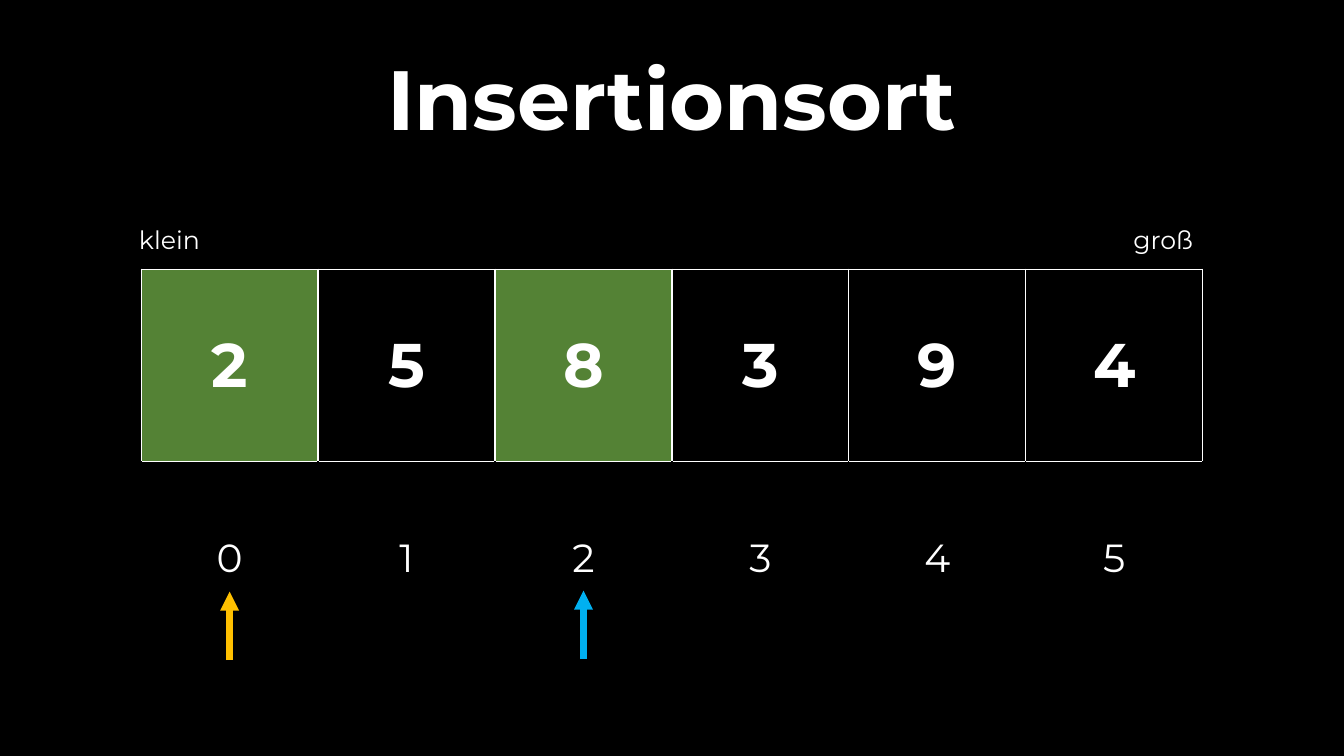
from lxml import etree
from pptx import Presentation
from pptx.dml.color import RGBColor
from pptx.enum.shapes import MSO_CONNECTOR
from pptx.enum.text import MSO_ANCHOR, MSO_AUTO_SIZE, PP_ALIGN
from pptx.oxml.ns import qn
from pptx.util import Inches, Pt

LEFT, CENTER, RIGHT = PP_ALIGN.LEFT, PP_ALIGN.CENTER, PP_ALIGN.RIGHT
TOP, MIDDLE = MSO_ANCHOR.TOP, MSO_ANCHOR.MIDDLE
STRAIGHT = MSO_CONNECTOR.STRAIGHT
FIT_SHAPE = MSO_AUTO_SIZE.SHAPE_TO_FIT_TEXT

BLACK = RGBColor(0x00, 0x00, 0x00)
WHITE = RGBColor(0xFF, 0xFF, 0xFF)
GREEN = RGBColor(0x54, 0x82, 0x35)
BLUE = RGBColor(0x00, 0xB0, 0xF0)
ORANGE = RGBColor(0xFF, 0xC0, 0x00)

VALUES = [2, 5, 8, 3, 9, 4]
SORTED_INDICES = {0, 2}
TABLE_LEFT, TABLE_TOP = 1.4, 2.67
CELL_WIDTH, CELL_HEIGHT = 1.755, 1.91
ARROW_LENGTH = 0.68


def write_text(paragraph, text, size, bold=False, align=LEFT):
    paragraph.alignment = align
    run = paragraph.add_run()
    run.text = text
    run.font.name = "Montserrat"
    run.font.size = Pt(size)
    run.font.bold = bold
    run.font.color.rgb = WHITE


def set_borders(cell, colors):
    properties = cell._tc.get_or_add_tcPr()
    for position, (side, color) in enumerate(zip("LRTB", colors)):
        line = etree.Element(qn(f"a:ln{side}"), w=str(Pt(1)))
        fill = etree.SubElement(line, qn("a:solidFill"))
        etree.SubElement(fill, qn("a:srgbClr"), val=str(color))
        properties.insert(position, line)


class SortSlide:
    def __init__(self, presentation):
        self.slide = presentation.slides.add_slide(presentation.slide_layouts[6])
        background = self.slide.background.fill
        background.solid()
        background.fore_color.rgb = BLACK

    def text(self, text, left, top, width, height, anchor=TOP, **text_format):
        shape = self.slide.shapes.add_textbox(
            Inches(left), Inches(top), Inches(width), Inches(height))
        frame = shape.text_frame
        frame.word_wrap = True
        frame.vertical_anchor = anchor
        write_text(frame.paragraphs[0], text, **text_format)
        return frame

    def title(self, text):
        frame = self.text(text, 0.15, 0.31, 13.03, 1.42, anchor=MIDDLE,
                          size=60, bold=True, align=CENTER)
        paragraph = frame.paragraphs[0]
        paragraph.line_spacing = 0.9
        paragraph.space_before = Pt(10)

    def label(self, text, left, align):
        frame = self.text(text, left, 2.18, 1.51, 0.4, size=18, align=align)
        frame.auto_size = FIT_SHAPE

    def cell(self, cell, text, fill_color, borders, **text_format):
        cell.vertical_anchor = MIDDLE
        if fill_color is None:
            cell.fill.background()
        else:
            cell.fill.solid()
            cell.fill.fore_color.rgb = fill_color
        set_borders(cell, borders)
        write_text(cell.text_frame.paragraphs[0], text, align=CENTER, **text_format)

    def array(self, values, sorted_indices):
        table = self.slide.shapes.add_table(
            2, len(values), Inches(TABLE_LEFT), Inches(TABLE_TOP),
            Inches(CELL_WIDTH * len(values)), Inches(CELL_HEIGHT * 2)).table
        table.first_row = False
        table.horz_banding = False
        for row in table.rows:
            row.height = Inches(CELL_HEIGHT)
        for index, value in enumerate(values):
            table.columns[index].width = Inches(CELL_WIDTH)
            fill_color = GREEN if index in sorted_indices else None
            self.cell(table.cell(0, index), str(value), fill_color,
                      [WHITE] * 4, size=44, bold=True)
            self.cell(table.cell(1, index), str(index), None,
                      [BLACK, BLACK, WHITE, BLACK], size=28)

    def pointer(self, index, tip, color):
        x = Inches(TABLE_LEFT + CELL_WIDTH * (index + 0.5))
        arrow = self.slide.shapes.add_connector(
            STRAIGHT, x, Inches(tip + ARROW_LENGTH), x, Inches(tip))
        arrow.line.color.rgb = color
        arrow.line.width = Pt(4.5)
        etree.SubElement(arrow.line._get_or_add_ln(), qn("a:tailEnd"), type="triangle")
        etree.SubElement(arrow._element.spPr, qn("a:effectLst"))


def main():
    presentation = Presentation()
    presentation.slide_width = Inches(13.33)
    presentation.slide_height = Inches(7.5)
    sort_slide = SortSlide(presentation)
    sort_slide.array(VALUES, SORTED_INDICES)
    sort_slide.label("groß", 10.42, RIGHT)
    sort_slide.label("klein", 1.28, LEFT)
    sort_slide.pointer(2, 5.86, BLUE)
    sort_slide.pointer(0, 5.87, ORANGE)
    sort_slide.title("Insertionsort")
    presentation.save("out.pptx")


if __name__ == "__main__":
    main()
